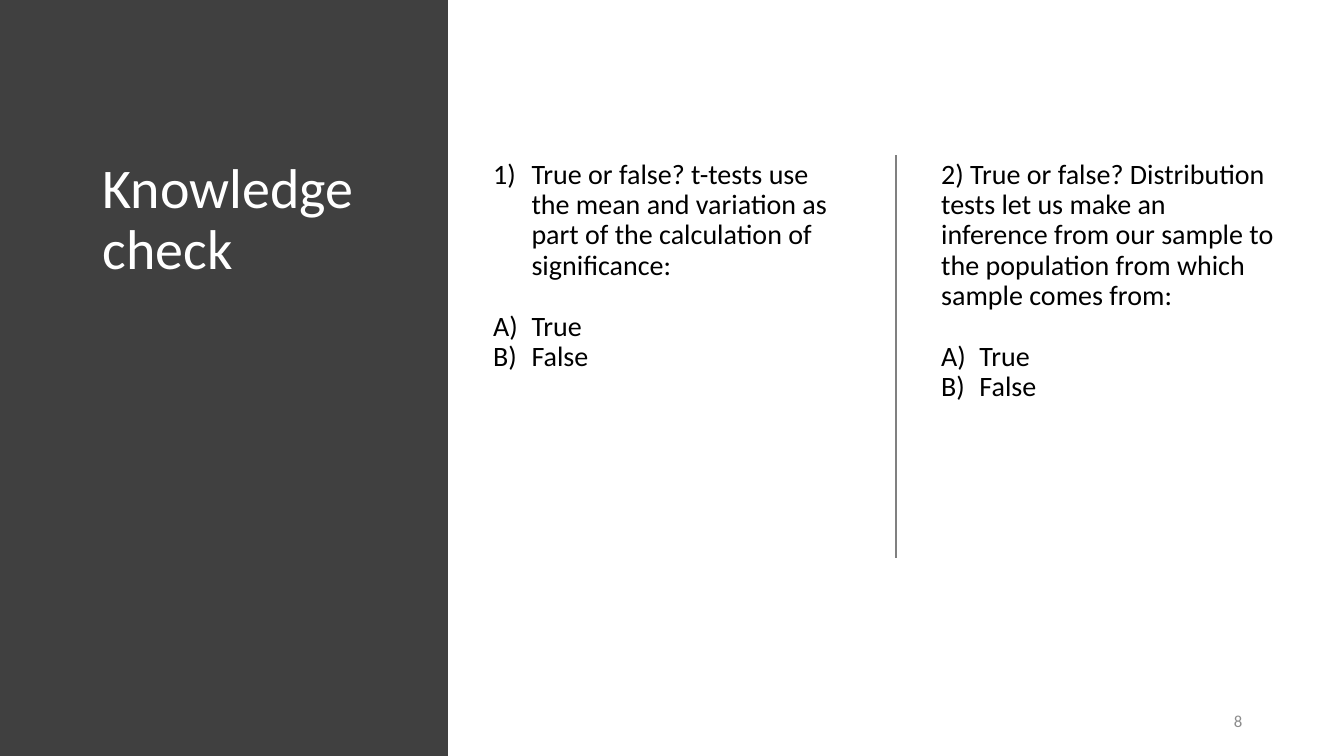
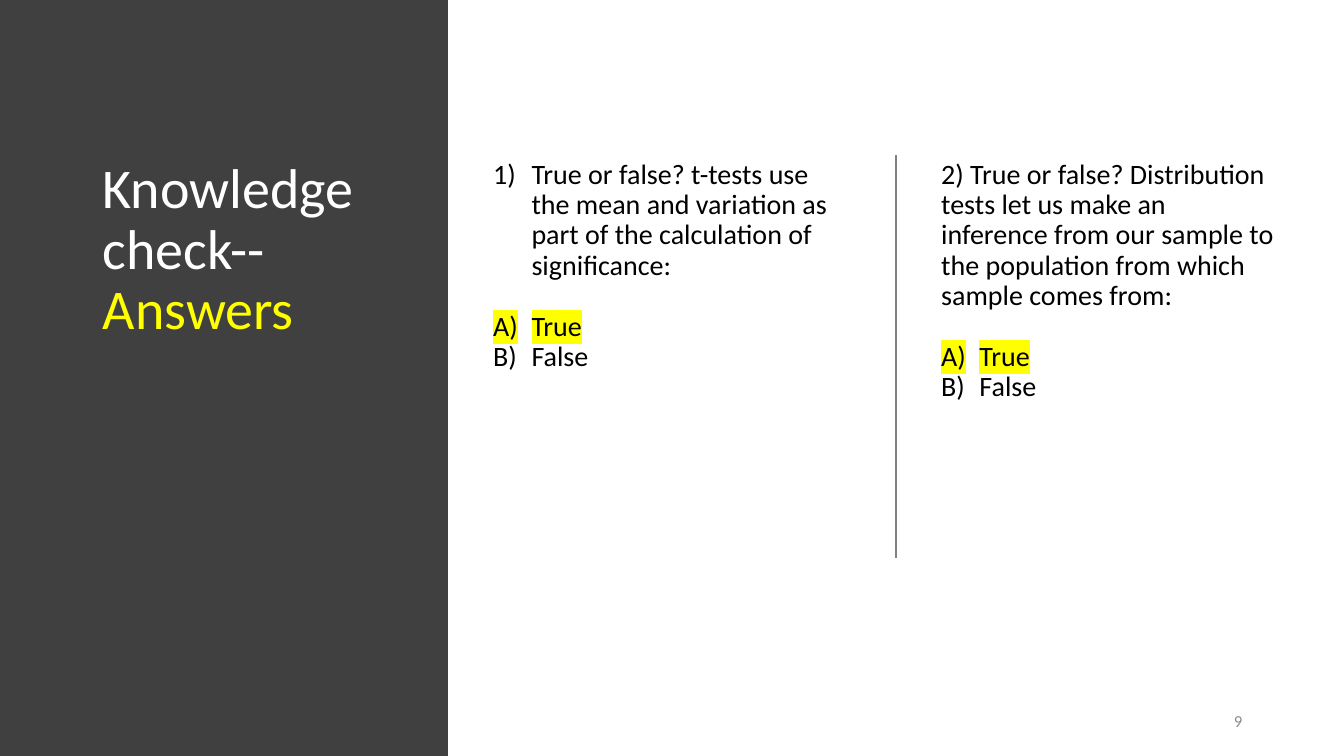
from collections import namedtuple

from lxml.etree import SubElement
from pptx import Presentation
from pptx.dml.color import RGBColor
from pptx.enum.shapes import MSO_CONNECTOR, MSO_SHAPE
from pptx.enum.text import MSO_ANCHOR, PP_ALIGN
from pptx.oxml.ns import qn
from pptx.util import Inches, Pt

Box = namedtuple("Box", "left top width height")

FONT = "Calibri"
PANEL, RULE, FOOTER = "404040", "808080", "8C8C8C"
WHITE, BLACK, YELLOW = "FFFFFF", "000000", "FFFF00"

WIDTH, HEIGHT = 13.33, 7.5
COLUMN = WIDTH / 3
GUTTER = 0.35
BODY_TOP, BODY_HEIGHT = 1.54, 4.77
RULE_HEIGHT = 4
HANGING = 0.38
LINE_SPACING = 0.9
BLANK_LINE = 22

QUESTIONS = [
    ("True or false? t-tests use the mean and variation as part of the "
     "calculation of significance:", True, 3.75),
    ("2) True or false? Distribution tests let us make an inference from our "
     "sample to the population from which sample comes from:", False, 3.5),
]
CHOICES = ["True", "False"]
CORRECT = "True"


def color(hex_string):
    return RGBColor.from_string(hex_string)


def add_text_frame(slide, box, anchor=MSO_ANCHOR.TOP):
    frame = slide.shapes.add_textbox(*map(Inches, box)).text_frame
    frame.word_wrap = True
    frame.vertical_anchor = anchor
    return frame


def add_run(paragraph, text, size, hex_string, highlight=None):
    run = paragraph.add_run()
    run.text = text
    run.font.name = FONT
    run.font.size = Pt(size)
    run.font.color.rgb = color(hex_string)
    if highlight:
        properties = run.font._element
        mark = SubElement(properties, qn("a:highlight"))
        SubElement(mark, qn("a:srgbClr"), val=highlight)
        properties.find(qn("a:solidFill")).addnext(mark)


def number_paragraph(paragraph, scheme):
    properties = paragraph._p.get_or_add_pPr()
    properties.set("marL", str(Inches(HANGING)))
    properties.set("indent", str(-Inches(HANGING)))
    SubElement(properties, qn("a:buFont"), typeface="+mj-lt")
    SubElement(properties, qn("a:buAutoNum"), type=scheme)


def add_title_panel(slide, box, title_lines):
    panel = slide.shapes.add_shape(MSO_SHAPE.RECTANGLE, *map(Inches, box))
    panel.shadow.inherit = False
    panel.fill.solid()
    panel.fill.fore_color.rgb = color(PANEL)
    panel.line.fill.background()
    title_box = Box(box.left + 0.92, BODY_TOP, box.width - 1.27, BODY_HEIGHT)
    title = add_text_frame(slide, title_box).paragraphs[0]
    title.line_spacing = LINE_SPACING
    for index, (text, hex_string) in enumerate(title_lines):
        if index:
            title.add_line_break()
        add_run(title, text, 40, hex_string)


def add_question(slide, box, prompt, numbered, show_answer):
    frame = add_text_frame(slide, box)
    question = frame.paragraphs[0]
    question.line_spacing = LINE_SPACING
    add_run(question, prompt, 20, BLACK)
    if numbered:
        number_paragraph(question, "arabicParenR")
    for index, choice in enumerate(CHOICES):
        answer = frame.add_paragraph()
        answer.line_spacing = LINE_SPACING
        answer.space_before = Pt(0 if index else BLANK_LINE)
        number_paragraph(answer, "alphaUcParenR")
        marked = show_answer and choice == CORRECT
        add_run(answer, choice, 20, BLACK, YELLOW if marked else None)


def add_divider(slide, x, top, height):
    ends = map(Inches, (x, top, x, top + height))
    divider = slide.shapes.add_connector(MSO_CONNECTOR.STRAIGHT, *ends)
    divider.line.color.rgb = color(RULE)
    divider.line.width = Pt(1)
    SubElement(divider._element.spPr, qn("a:effectLst"))


def add_page_number(slide, box, number):
    footer = add_text_frame(slide, box, MSO_ANCHOR.MIDDLE).paragraphs[0]
    footer.alignment = PP_ALIGN.RIGHT
    add_run(footer, str(number), 12, FOOTER)


def add_quiz_slide(deck, title_lines, number, show_answer):
    slide = deck.slides.add_slide(deck.slide_layouts[6])
    add_title_panel(slide, Box(0, 0, COLUMN, HEIGHT), title_lines)
    for column, (prompt, numbered, width) in enumerate(QUESTIONS, 1):
        box = Box(column * COLUMN + GUTTER, BODY_TOP, width, BODY_HEIGHT)
        add_question(slide, box, prompt, numbered, show_answer)
    add_divider(slide, 2 * COLUMN, BODY_TOP, RULE_HEIGHT)
    add_page_number(slide, Box(9.42, 6.95, 3, 0.4), number)


def main():
    deck = Presentation()
    deck.slide_width, deck.slide_height = Inches(WIDTH), Inches(HEIGHT)
    add_quiz_slide(deck, [("Knowledge check", WHITE)], 8, False)
    add_quiz_slide(
        deck, [("Knowledge check--", WHITE), ("Answers", YELLOW)], 9, True)
    deck.save("out.pptx")


if __name__ == "__main__":
    main()
